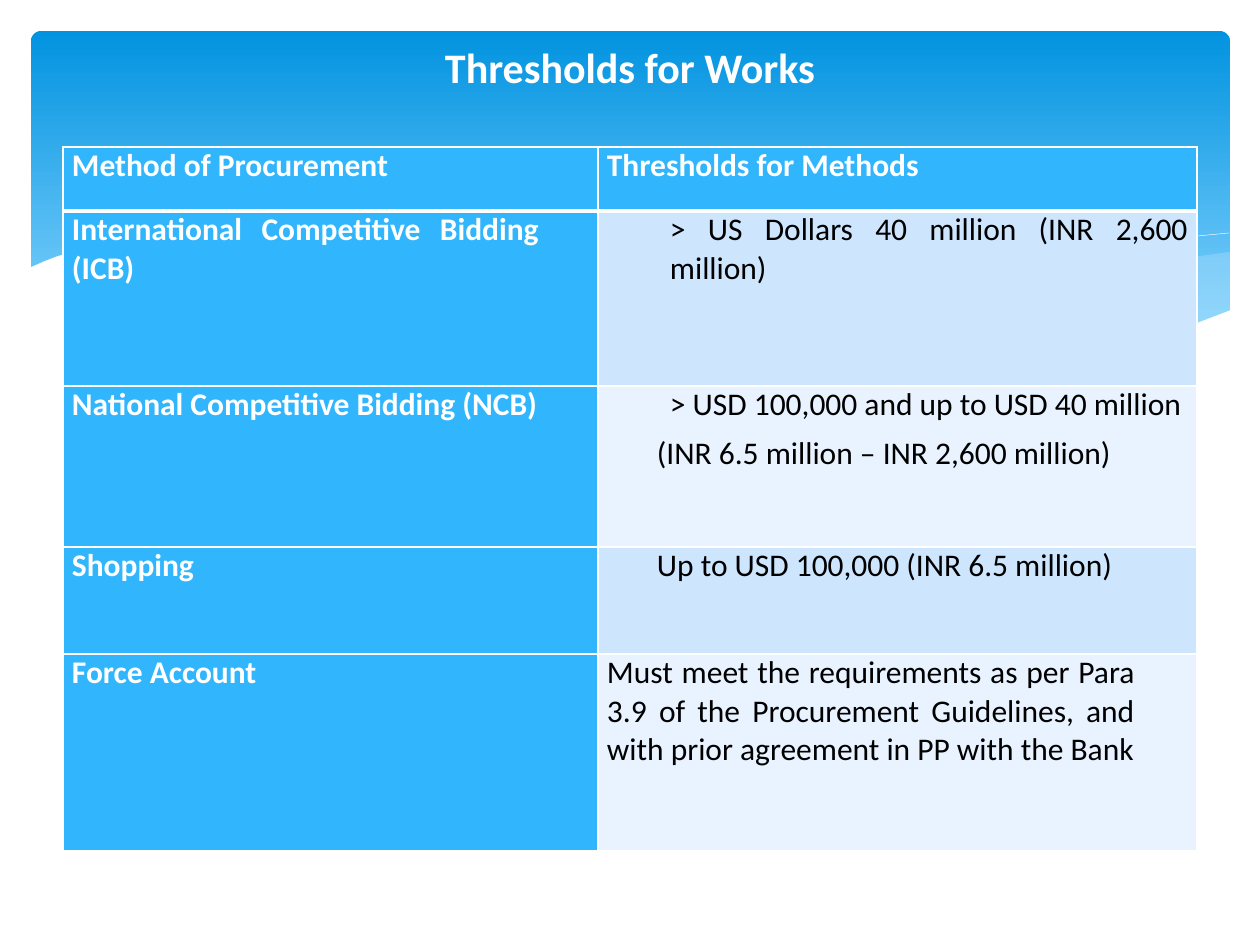
import pptx
import pptx.dml.color
import pptx.enum.shapes
import pptx.enum.text
import pptx.oxml
import pptx.oxml.ns
import pptx.util

RGBColor = pptx.dml.color.RGBColor
WHITE = RGBColor(0xFF, 0xFF, 0xFF)
BLACK = RGBColor(0x00, 0x00, 0x00)
BLUE = RGBColor(0x31, 0xB6, 0xFD)
DEEP_BLUE = RGBColor(0x02, 0x93, 0xE0)
SKY_BLUE = RGBColor(0x83, 0xD3, 0xFE)
MIST = RGBColor(0xC6, 0xE7, 0xFC)
BANDS = [RGBColor(0xE8, 0xF3, 0xFF), RGBColor(0xCE, 0xE5, 0xFE)]

SCALE = 914400 / 126
FONT = "Calibri"
PAD, LABEL_PAD = 9, 59
COL_WIDTHS = [535, 599]

ROWS = [
    (64, "Method of Procurement", [("Thresholds for Methods", 0)], PAD),
    (175, "International Competitive Bidding (ICB)",
     [("> US Dollars 40 million (INR 2,600 million)", 63)], PAD),
    (161, "National Competitive Bidding (NCB)",
     [("> USD 100,000 and up to USD 40 million", 63),
      ("(INR 6.5 million – INR 2,600 million)", 50)], PAD),
    (107, "Shopping", [("Up to USD 100,000 (INR 6.5 million)", 50)], PAD),
    (197, "Force Account",
     [("Must meet the requirements as per Para 3.9 of the Procurement "
       "Guidelines, and with prior agreement in PP with the Bank", 0)], 62),
]

RIGHT_WAVE = [
    (1229, 252), (1194, 257), (1142, 268), (1085, 281), (1014, 298),
    (949, 312), (890, 324), (833, 334), (888, 341), (938, 346),
    (984, 349), (1026, 350), (1076, 348), (1120, 343), (1160, 334),
    (1196, 324), (1230, 311), (1230, 252)]
MIDDLE_WAVE = [
    (1125, 344), (1055, 334), (977, 320), (890, 302), (793, 280),
    (736, 266), (682, 255), (633, 247), (586, 241), (529, 236),
    (479, 233), (433, 234), (394, 237), (360, 241), (407, 247),
    (456, 256), (509, 266), (566, 280), (668, 302), (757, 321),
    (838, 335), (910, 344), (974, 349), (1031, 350), (1080, 349)]
LONG_LINE = [
    (389, 246), (413, 242), (457, 238), (505, 236), (567, 237),
    (616, 239), (672, 244), (733, 252), (801, 262), (876, 276),
    (958, 294), (1047, 316), (1143, 343)]
SHORT_LINE = [
    (772, 324), (823, 310), (876, 296), (942, 281), (1016, 265),
    (1091, 251), (1146, 242), (1198, 236), (1229, 233)]
WHITE_WAVE = [
    (1231, 310), (1197, 323), (1159, 334), (1118, 342), (1071, 346),
    (1019, 349), (959, 347), (892, 340), (816, 330), (730, 315),
    (634, 294), (563, 277), (493, 261), (428, 248), (368, 239),
    (315, 234), (266, 232), (223, 232), (184, 233), (150, 236),
    (120, 241), (96, 246), (74, 252), (58, 256), (45, 261),
    (29, 268), (29, 415), (1231, 415)]


def px(n):
    """Turn a length in px into EMU."""
    return pptx.util.Emu(round(n * SCALE))


def set_paragraph(p, text, size, color, bold, align):
    """Write one paragraph with its font and alignment."""
    p.text = text
    p.alignment = align
    p.font.name = FONT
    p.font.size = pptx.util.Pt(size)
    p.font.bold = bold
    p.font.color.rgb = color


def add_banner(shapes):
    """Add the rounded gradient panel at the top."""
    sp = shapes.add_shape(pptx.enum.shapes.MSO_SHAPE.ROUNDED_RECTANGLE,
                          px(31), px(31), px(1199), px(340))
    sp.adjustments[0] = 0.03
    sp.shadow.inherit = False
    sp.line.fill.background()
    sp.fill.gradient()
    sp.fill.gradient_angle = 270
    stops = sp.fill.gradient_stops
    for stop, color, position in zip(stops, (DEEP_BLUE, SKY_BLUE), (0, 0.9)):
        stop.color.rgb = color
        stop.position = position


def add_outline(shapes, points, close):
    """Add a freeform through points given in px."""
    builder = shapes.build_freeform(*points[0], scale=SCALE)
    builder.add_line_segments(points[1:], close=close)
    sp = builder.convert_to_shape()
    sp.shadow.inherit = False
    return sp


def add_wave(shapes, points, color, opacity):
    """Add a filled wave with an opacity in percent."""
    sp = add_outline(shapes, points, True)
    sp.line.fill.background()
    sp.fill.solid()
    sp.fill.fore_color.rgb = color
    clr = sp.fill._xPr.find(".//" + pptx.oxml.ns.qn("a:srgbClr"))
    alpha = pptx.oxml.parse_xml(
        f'<a:alpha {pptx.oxml.ns.nsdecls("a")} val="{opacity * 1000}"/>')
    clr.append(alpha)


def add_wave_line(shapes, points):
    """Add a thin white open curve."""
    sp = add_outline(shapes, points, False)
    sp.fill.background()
    sp.line.color.rgb = WHITE
    sp.line.width = pptx.util.Pt(0.25)


def set_borders(cell, top, bottom):
    """Give a cell white borders, with top and bottom widths in points."""
    tc_pr = cell._tc.get_or_add_tcPr()
    for side, width in (("L", 1), ("R", 1), ("T", top), ("B", bottom)):
        tc_pr.append(pptx.oxml.parse_xml(
            f'<a:ln{side} {pptx.oxml.ns.nsdecls("a")} w="{width * 12700}">'
            f'<a:solidFill><a:srgbClr val="{WHITE}"/></a:solidFill>'
            f'</a:ln{side}>'))


def fill_cell(cell, lines, fill, color, bold, right):
    """Write indented lines into a cell and colour it."""
    cell.margin_left, cell.margin_right = px(PAD), px(right)
    cell.margin_top = cell.margin_bottom = 0
    cell.fill.solid()
    cell.fill.fore_color.rgb = fill
    tf = cell.text_frame
    for i, (text, indent) in enumerate(lines):
        p = tf.add_paragraph() if i else tf.paragraphs[0]
        set_paragraph(p, text, 18, color, bold,
                      pptx.enum.text.PP_ALIGN.JUSTIFY)
        p.space_after = pptx.util.Pt(6)
        if indent:
            p._p.get_or_add_pPr().set("marL", str(px(indent)))


def add_thresholds(shapes):
    """Add the table of procurement methods and thresholds."""
    height = sum(row[0] for row in ROWS)
    table = shapes.add_table(len(ROWS), 2, px(63), px(147),
                             px(sum(COL_WIDTHS)), px(height)).table
    for column, width in zip(table.columns, COL_WIDTHS):
        column.width = px(width)
    for i, (row_height, method, lines, right) in enumerate(ROWS):
        table.rows[i].height = px(row_height)
        label, value = table.cell(i, 0), table.cell(i, 1)
        for cell in (label, value):
            set_borders(cell, 3 if i == 1 else 1, 3 if i == 0 else 1)
        header = i == 0
        fill_cell(label, [(method, 0)], BLUE, WHITE, True, LABEL_PAD)
        fill_cell(value, lines, BLUE if header else BANDS[i % 2],
                  WHITE if header else BLACK, header, right)


def set_title(slide, text):
    """Place the title in front of the banner."""
    sp = slide.shapes.title
    sp.left, sp.top, sp.width, sp.height = px(63), px(38), px(1134), px(57)
    tf = sp.text_frame
    tf.vertical_anchor = pptx.enum.text.MSO_ANCHOR.MIDDLE
    set_paragraph(tf.paragraphs[0], text, 24, WHITE, True,
                  pptx.enum.text.PP_ALIGN.CENTER)
    slide.shapes._spTree.append(sp._element)


def main():
    """Build the slide and save it."""
    prs = pptx.Presentation()
    prs.slide_width, prs.slide_height = px(1260), px(945)
    slide = prs.slides.add_slide(prs.slide_layouts[5])
    shapes = slide.shapes
    add_banner(shapes)
    add_wave(shapes, RIGHT_WAVE, MIST, 29)
    add_wave(shapes, MIDDLE_WAVE, MIST, 40)
    add_wave_line(shapes, LONG_LINE)
    add_wave_line(shapes, SHORT_LINE)
    add_wave(shapes, WHITE_WAVE, WHITE, 100)
    set_title(slide, "Thresholds for Works")
    add_thresholds(shapes)
    prs.save("out.pptx")


if __name__ == "__main__":
    main()
